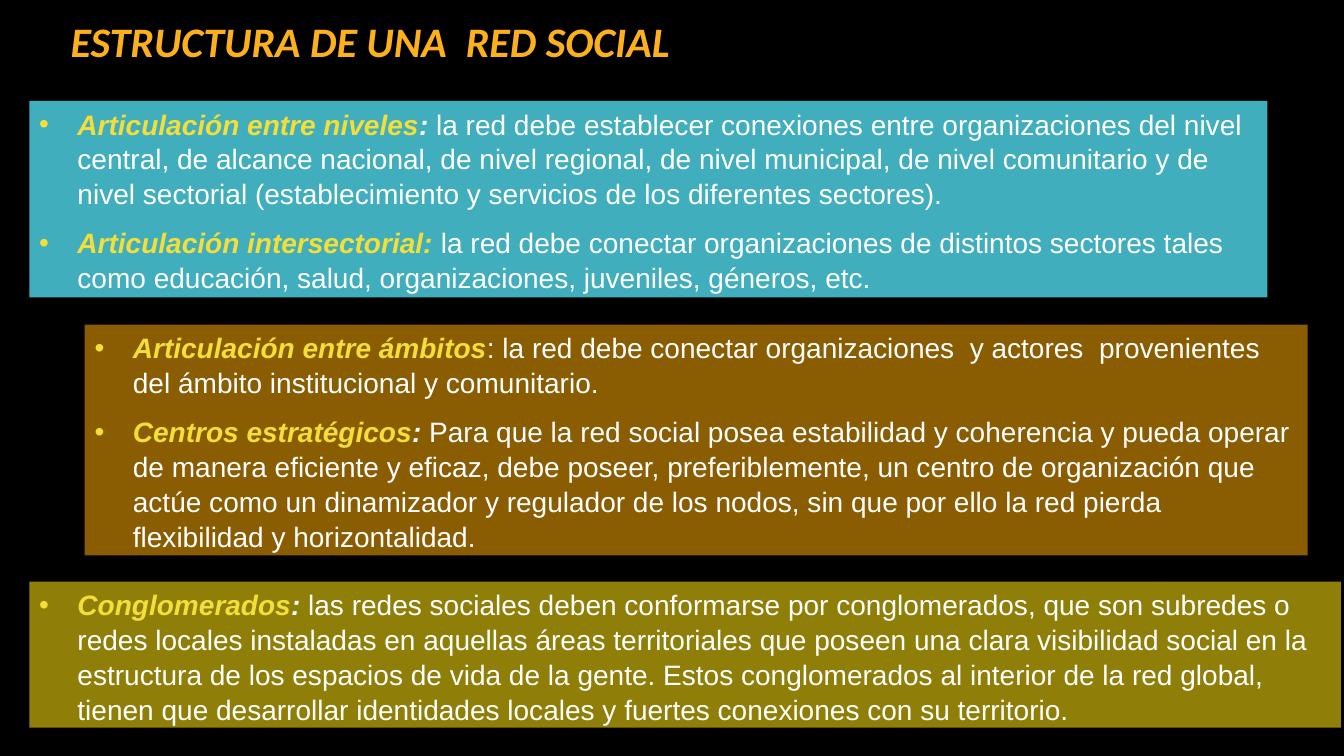
import pptx
import pptx.util
import pptx.dml.color
import pptx.enum.shapes
import pptx.enum.text
from lxml import etree

COLORS = {
    "background": "000000",
    "title": "FCB11C",
    "term": "F4DE3A",
    "body": "FFFFFF",
    "levels": "41AEBD",
    "centres": "8A5D02",
    "clusters": "8F7F08",
}
WIDTH = pptx.util.Inches(13.33)
HEIGHT = pptx.util.Inches(7.5)
INDENT = pptx.util.Inches(0.38)
TERM = {"color": "term", "bold": True, "italic": True}
COLON = {"color": "body", "bold": True, "italic": True}
BODY = {"color": "body"}

# Each panel: colour, box in percent of the slide, bullets made of formatted parts
PANELS = [
    ("levels", (2.18, 13.33, 92.12, 26), [
        [("Articulación entre niveles", TERM), (":", COLON),
         (" la red debe establecer conexiones entre organizaciones del nivel central, "
          "de alcance nacional, de nivel regional, de nivel municipal, de nivel "
          "comunitario y de nivel sectorial (establecimiento y servicios de los "
          "diferentes sectores).", BODY)],
        [("Articulación intersectorial: ", TERM),
         ("la red debe conectar organizaciones de distintos sectores tales como "
          "educación, salud, organizaciones, juveniles, géneros, etc.", BODY)],
    ]),
    ("clusters", (2.18, 76.93, 97.6, 19.33), [
        [("Conglomerados", TERM), (":", COLON),
         (" las redes sociales deben conformarse por conglomerados, que son subredes o "
          "redes locales instaladas en aquellas áreas territoriales que poseen una clara "
          "visibilidad social en la estructura de los espacios de vida de la gente. Estos "
          "conglomerados al interior de la red global, tienen que desarrollar identidades "
          "locales y fuertes conexiones con su territorio.", BODY)],
    ]),
    ("centres", (6.3, 42.93, 91, 30.53), [
        [("Articulación entre ámbitos", TERM),
         (": la red debe conectar organizaciones  y actores  provenientes del ámbito "
          "institucional y comunitario.", BODY)],
        [("Centros estratégicos", TERM), (":", COLON),
         (" Para que la red social posea estabilidad y coherencia y pueda operar de "
          "manera eficiente y eficaz, debe poseer, preferiblemente, un centro de "
          "organización que actúe como un dinamizador y regulador de los nodos, sin que "
          "por ello la red pierda flexibilidad y horizontalidad.", BODY)],
    ]),
]


def rgb(name):
    return pptx.dml.color.RGBColor.from_string(COLORS[name])


def to_slide(box):
    """Turn percentages of the slide into lengths."""
    return [round(share * size / 100)
            for share, size in zip(box, (WIDTH, HEIGHT, WIDTH, HEIGHT))]


def add_text(paragraph, text, color, font="Arial", size=20, bold=False, italic=False):
    run = paragraph.add_run()
    run.text = text
    run.font.name = font
    run.font.size = pptx.util.Pt(size)
    run.font.bold = bold
    run.font.italic = italic
    run.font.color.rgb = rgb(color)


def add_bullet(paragraph):
    properties = paragraph._p.get_or_add_pPr()
    properties.set("marL", str(INDENT))
    properties.set("indent", str(-INDENT))
    tag = pptx.oxml.ns.qn
    bullet_color = etree.SubElement(properties, tag("a:buClr"))
    etree.SubElement(bullet_color, tag("a:srgbClr"), val=COLORS["term"])
    etree.SubElement(properties, tag("a:buFont"), typeface="Arial")
    etree.SubElement(properties, tag("a:buChar"), char="•")


def add_heading(slide, box):
    heading = slide.shapes.title
    heading.left, heading.top, heading.width, heading.height = to_slide(box)
    frame = heading.text_frame
    frame.word_wrap = True
    frame.vertical_anchor = pptx.enum.text.MSO_ANCHOR.MIDDLE
    paragraph = frame.paragraphs[0]
    paragraph.alignment = pptx.enum.text.PP_ALIGN.LEFT
    paragraph.line_spacing = 0.9
    add_text(paragraph, "ESTRUCTURA DE UNA  RED SOCIAL", "title",
             font="Calibri", size=30, bold=True, italic=True)


def add_panel(slide, color, box, bullets):
    panel = slide.shapes.add_shape(pptx.enum.shapes.MSO_SHAPE.RECTANGLE, *to_slide(box))
    panel.shadow.inherit = False
    panel.fill.solid()
    panel.fill.fore_color.rgb = rgb(color)
    panel.line.fill.background()
    frame = panel.text_frame
    frame.word_wrap = True
    frame.vertical_anchor = pptx.enum.text.MSO_ANCHOR.TOP
    for index, parts in enumerate(bullets):
        paragraph = frame.add_paragraph() if index else frame.paragraphs[0]
        add_bullet(paragraph)
        paragraph.alignment = pptx.enum.text.PP_ALIGN.LEFT
        paragraph.line_spacing = 1.04
        paragraph.space_before = pptx.util.Pt(10 if index else 0)
        for text, style in parts:
            add_text(paragraph, text, **style)


def main():
    deck = pptx.Presentation()
    deck.slide_width, deck.slide_height = WIDTH, HEIGHT
    slide = deck.slides.add_slide(deck.slide_layouts[5])
    slide.background.fill.solid()
    slide.background.fill.fore_color.rgb = rgb("background")

    # Title, then the three coloured panels
    add_heading(slide, (4.5, 1.73, 75, 8.13))
    for color, box, bullets in PANELS:
        add_panel(slide, color, box, bullets)
    deck.save("out.pptx")


if __name__ == "__main__":
    main()
